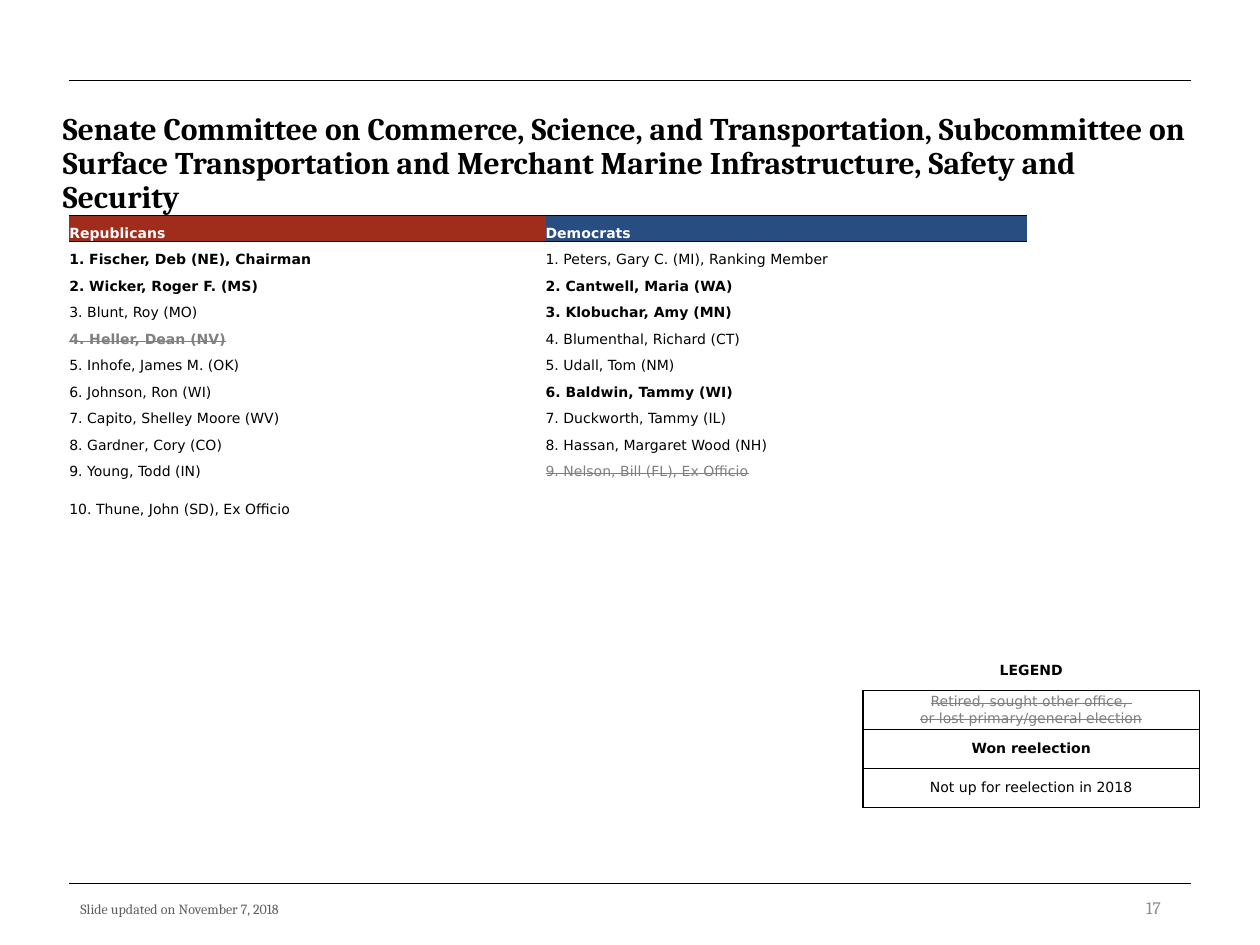
from itertools import zip_longest

from lxml import etree
from pptx import Presentation
from pptx.dml.color import RGBColor
from pptx.enum import shapes, text
from pptx.oxml.ns import qn
from pptx.util import Inches, Pt

BLACK = RGBColor(0x00, 0x00, 0x00)
WHITE = RGBColor(0xFF, 0xFF, 0xFF)
RED = RGBColor(0xA0, 0x2C, 0x1C)
BLUE = RGBColor(0x28, 0x4D, 0x81)
STRUCK_GRAY = RGBColor(0x80, 0x80, 0x80)
LEGEND_GRAY = RGBColor(0x7F, 0x7F, 0x7F)
FOOTER_GRAY = RGBColor(0x5F, 0x5F, 0x5F)
NUMBER_GRAY = RGBColor(0x8C, 0x8C, 0x8C)

SERIF = "Cambria"
SMALL = {"name": "DejaVu Sans", "size": Pt(8)}
PLAIN = {**SMALL, "color": BLACK, "bold": False}
WON = {**SMALL, "color": BLACK, "bold": True}
LOST = {**SMALL, "color": STRUCK_GRAY, "bold": False, "strike": True}
LOST_BOLD = {**LOST, "bold": True}
LEGEND_LOST = {**LOST, "color": LEGEND_GRAY}
HEADER = {**SMALL, "color": WHITE, "bold": True}

TITLE = ("Senate Committee on Commerce, Science, and Transportation, Subcommittee on "
         "Surface Transportation and Merchant Marine Infrastructure, Safety and Security")
PARTIES = [("Republicans", RED, 3.78), ("Democrats", BLUE, 3.82)]
REPUBLICANS = [
    ("Fischer, Deb (NE), Chairman", WON),
    ("Wicker, Roger F. (MS)", WON),
    ("Blunt, Roy (MO)", PLAIN),
    ("Heller, Dean (NV)", LOST_BOLD),
    ("Inhofe, James M. (OK)", PLAIN),
    ("Johnson, Ron (WI)", PLAIN),
    ("Capito, Shelley Moore (WV)", PLAIN),
    ("Gardner, Cory (CO)", PLAIN),
    ("Young, Todd (IN)", PLAIN),
    ("Thune, John (SD), Ex Officio", PLAIN),
]
DEMOCRATS = [
    ("Peters, Gary C. (MI), Ranking Member", PLAIN),
    ("Cantwell, Maria (WA)", WON),
    ("Klobuchar, Amy (MN)", WON),
    ("Blumenthal, Richard (CT)", PLAIN),
    ("Udall, Tom (NM)", PLAIN),
    ("Baldwin, Tammy (WI)", WON),
    ("Duckworth, Tammy (IL)", PLAIN),
    ("Hassan, Margaret Wood (NH)", PLAIN),
    ("Nelson, Bill (FL), Ex Officio", LOST),
]
LEGEND = [
    (["LEGEND"], WON),
    (["Retired, sought other office, ", "or lost primary/general election"], LEGEND_LOST),
    (["Won reelection"], WON),
    (["Not up for reelection in 2018"], PLAIN),
]


def write_lines(frame, lines, style, align=text.PP_ALIGN.LEFT, spacing=None):
    for index, line in enumerate(lines):
        paragraph = frame.add_paragraph() if index else frame.paragraphs[0]
        paragraph.alignment = align
        paragraph.line_spacing = spacing
        run = paragraph.add_run()
        run.text = line
        for key, value in style.items():
            if key == "color":
                run.font.color.rgb = value
            elif key == "strike":
                run.font._element.set("strike", "sngStrike")
            else:
                setattr(run.font, key, value)


def add_text(slide, box, line, style, anchor=text.MSO_ANCHOR.TOP, **layout):
    frame = slide.shapes.add_textbox(*map(Inches, box)).text_frame
    frame.word_wrap = True
    frame.vertical_anchor = anchor
    write_lines(frame, [line], style, **layout)


def add_rule(slide, y):
    rule = slide.shapes.add_connector(
        shapes.MSO_CONNECTOR.STRAIGHT, Inches(0.55), Inches(y), Inches(9.45), Inches(y))
    rule.line.color.rgb = BLACK
    rule.line.width = Pt(0.5)
    etree.SubElement(rule._element.spPr, qn("a:effectLst"))


def add_plain_table(slide, left, top, widths, row_count, row_height):
    table = slide.shapes.add_table(
        row_count, len(widths), Inches(left), Inches(top),
        Inches(sum(widths)), Inches(row_height * row_count)).table
    table.first_row = table.horz_banding = False
    for column, width in zip(table.columns, widths):
        column.width = Inches(width)
    for row in table.rows:
        row.height = Inches(row_height)
    return table


def fill_cell(cell, lines, style, anchor, margins, sides, width, fill=None, **layout):
    """Write a cell; draw borders on the given sides (letters of LRTB) only."""
    cell.vertical_anchor = anchor
    cell.margin_left = cell.margin_right = Inches(margins[0])
    cell.margin_top = cell.margin_bottom = Inches(margins[1])
    properties = cell._tc.get_or_add_tcPr()
    for side in "LRTB":
        border = etree.SubElement(properties, qn(f"a:ln{side}"), w=str(Pt(width)))
        if side in sides:
            paint = etree.SubElement(border, qn("a:solidFill"))
            etree.SubElement(paint, qn("a:srgbClr"), val=str(BLACK))
        else:
            etree.SubElement(border, qn("a:noFill"))
    if fill is None:
        cell.fill.background()
    else:
        cell.fill.solid()
        cell.fill.fore_color.rgb = fill
    write_lines(cell.text_frame, lines, style, **layout)


def add_legend(slide):
    table = add_plain_table(slide, 6.85, 5.17, [2.67], len(LEGEND), 0.31)
    for index, (lines, style) in enumerate(LEGEND):
        fill_cell(table.cell(index, 0), lines, style, text.MSO_ANCHOR.MIDDLE, (0.04, 0.02),
                  "LRTB" if index else "B", 1, align=text.PP_ALIGN.CENTER)


def add_members(slide):
    members = list(zip_longest(REPUBLICANS, DEMOCRATS))
    widths = [width for _, _, width in PARTIES]
    table = add_plain_table(slide, 0.55, 1.71, widths, len(members) + 1, 0.21)
    bottom = text.MSO_ANCHOR.BOTTOM
    for column, (party, color, _) in enumerate(PARTIES):
        fill_cell(table.cell(0, column), [party], HEADER, bottom, (0, 0), "TB", 0.5, color)
    for number, pair in enumerate(members, start=1):
        for column, member in enumerate(pair):
            name, style = member or ("", PLAIN)
            label = f"{number}. {name}" if name else ""
            fill_cell(table.cell(number, column), [label], style, bottom, (0, 0),
                      "T" if number == 1 else "", 0.5)


def main():
    presentation = Presentation()
    presentation.slide_width, presentation.slide_height = Inches(10), Inches(7.5)
    slide = presentation.slides.add_slide(presentation.slide_layouts[6])
    for y in (7.01, 0.64):
        add_rule(slide, y)
    add_text(slide, (0.54, 7.1, 4.4, 0.24), "Slide updated on November 7, 2018",
             {"name": SERIF, "size": Pt(8), "color": FOOTER_GRAY})
    add_text(slide, (0.4, 0.85, 9.2, 0.7), TITLE,
             {"name": SERIF, "size": Pt(18), "color": BLACK, "bold": True}, spacing=0.9)
    add_text(slide, (7.06, 7.06, 2.25, 0.29), "17",
             {"name": SERIF, "size": Pt(10), "color": NUMBER_GRAY},
             text.MSO_ANCHOR.MIDDLE, align=text.PP_ALIGN.RIGHT)
    add_legend(slide)
    add_members(slide)
    presentation.save("out.pptx")


if __name__ == "__main__":
    main()
